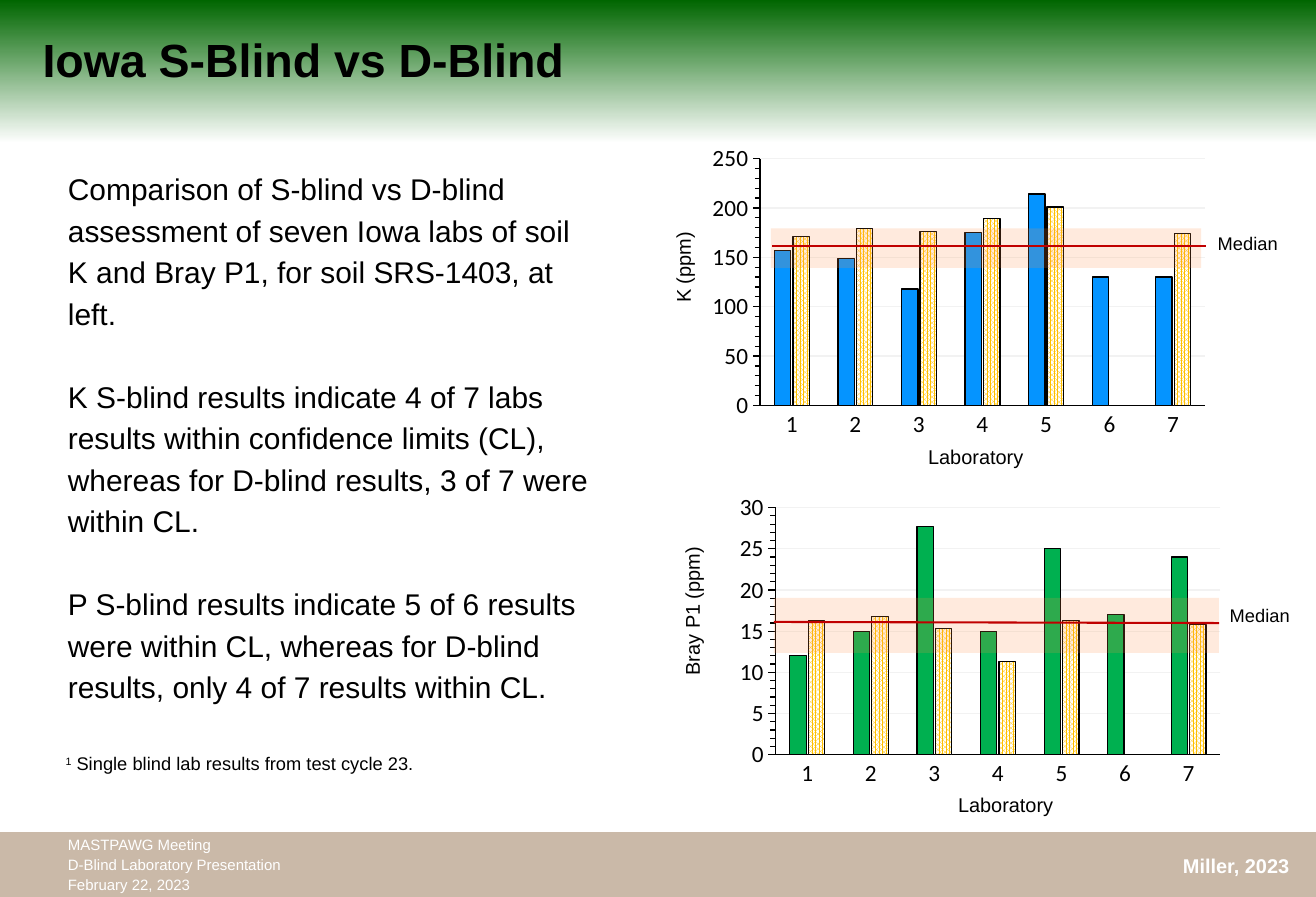
from pptx import Presentation
from pptx.chart.data import CategoryChartData
from pptx.dml.color import RGBColor
from pptx.enum.chart import XL_CHART_TYPE, XL_TICK_MARK
from pptx.enum.dml import MSO_PATTERN
from pptx.enum.shapes import MSO_CONNECTOR, MSO_SHAPE
from pptx.enum.text import MSO_ANCHOR, MSO_AUTO_SIZE, PP_ALIGN
from pptx.oxml import parse_xml
from pptx.oxml.ns import nsdecls, qn
from pptx.util import Pt
from lxml.etree import SubElement

# Theme
THEME = {
    "font": "Arial", "chart": "Calibri",
    "ink": "000000", "white": "FFFFFF", "top": "006600", "foot": "663300",
    "band": "FF8F43", "median": "C00000", "gold": "FFC000", "grid": "F2F2F2",
    "title": 28, "body": 18, "tick": 14, "label": 12, "note": 11, "small": 9,
}

# Content
TITLE = "Iowa S-Blind vs D-Blind"
BODY = [
    "Comparison of S-blind vs D-blind assessment of seven Iowa labs of soil "
    "K and Bray P1, for soil SRS-1403, at left.",
    "K S-blind results indicate 4 of 7 labs results within confidence limits "
    "(CL), whereas for D-blind results, 3 of 7 were within CL.",
    "P S-blind results indicate 5 of 6 results were within CL, whereas for "
    "D-blind results, only 4 of 7 results within CL.",
]
NOTE = ("1", " Single blind lab results from test cycle 23.")
MEETING = ["MASTPAWG Meeting", "D-Blind Laboratory Presentation",
           "February 22, 2023"]
AUTHOR = "Miller, 2023"
LABS = ["1", "2", "3", "4", "5", "6", "7"]
# Boxes are left, top, width, height; median is x1, y1, x2, y2
PANELS = [
    {"unit": "K (ppm)", "color": "0594FF", "max": 250, "major": 50, "minor": 10,
     "D-Blind": [157, 149, 118, 175, 214, 130, 130],
     "S-Blind": [171, 179, 176, 189, 201, None, 174],
     "at": (427.7, 86.4), "band": (463.9, 137.5, 259, 23.8),
     "median": (464.8, 148.2, 725.6, 148.2),
     "side": (382.3, 149.8, 57.6, 21.6), "under": (551.5, 264.2, 72, 21.6),
     "tag": (725.8, 136.4, 52.6, 20.9)},
    {"unit": "Bray P1 (ppm)", "color": "00B050", "max": 30, "major": 5, "minor": 1,
     "D-Blind": [12, 15, 27.7, 15, 25, 17, 24],
     "S-Blind": [16.3, 16.8, 15.3, 11.3, 16.3, None, 15.8],
     "at": (437, 296.6), "band": (465.8, 360, 267.8, 33.1),
     "median": (465.8, 374.4, 733.7, 375.1),
     "side": (368.6, 355, 95.8, 21.6), "under": (569.5, 473.8, 72, 21.6),
     "tag": (733, 360, 52.6, 20.9)},
]
SIZE = (298, 181.4)
PLOT = {"x": 0.1, "y": 0.05, "w": 0.9, "h": 0.82}


def tint(name):
    return RGBColor.from_string(THEME.get(name, name))


def write(para, text, size, color="ink", bold=False):
    run = para.add_run()
    run.text = text
    font = run.font
    font.name, font.size, font.bold = THEME["font"], Pt(THEME[size]), bold
    font.color.rgb = tint(color)
    return run


def add_text(slide, box, lines, size, color="ink", bold=False, wrap=False,
             pitch=None, gap=0):
    shape = slide.shapes.add_textbox(*map(Pt, box))
    frame = shape.text_frame
    frame.word_wrap = wrap
    frame.auto_size = MSO_AUTO_SIZE.SHAPE_TO_FIT_TEXT
    for i, line in enumerate(lines):
        para = frame.add_paragraph() if i else frame.paragraphs[0]
        if pitch:
            para.line_spacing = Pt(pitch)
        if i and gap:
            para.space_before = Pt(gap)
        write(para, line, size, color, bold)
    return shape


def add_block(slide, box, color, alpha):
    shape = slide.shapes.add_shape(MSO_SHAPE.RECTANGLE, *map(Pt, box))
    shape.shadow.inherit = False
    shape.fill.solid()
    shape.fill.fore_color.rgb = tint(color)
    shape.line.fill.background()
    tone = shape.fill._xPr.find(qn("a:solidFill"))[0]
    SubElement(tone, qn("a:alpha")).set("val", str(alpha * 1000))


def add_line(slide, ends):
    line = slide.shapes.add_connector(MSO_CONNECTOR.STRAIGHT, *map(Pt, ends))
    line.line.color.rgb = tint("median")
    line.line.width = Pt(1.25)
    SubElement(line._element.spPr, qn("a:effectLst"))


def add_bars(slide, panel):
    data = CategoryChartData()
    data.categories = LABS
    for name in ("D-Blind", "S-Blind"):
        data.add_series(name, panel[name])
    chart = slide.shapes.add_chart(XL_CHART_TYPE.COLUMN_CLUSTERED,
                                   *map(Pt, panel["at"] + SIZE), data).chart
    chart.has_legend = chart.has_title = False
    font = chart.font
    font.name, font.size, font.bold = THEME["chart"], Pt(THEME["tick"]), False
    font.color.rgb = tint("ink")

    # Bars
    plot = chart.plots[0]
    plot.gap_width, plot.overlap, plot.vary_by_categories = 176, -13, False
    for bars in plot.series:
        fill = bars.format.fill
        if bars.name == "D-Blind":
            fill.solid()
            fill.fore_color.rgb = tint(panel["color"])
        else:
            fill.patterned()
            fill.pattern = MSO_PATTERN.PERCENT_80
            fill.fore_color.rgb = tint("gold")
            fill.back_color.rgb = tint("white")
        bars.format.line.color.rgb = tint("ink")
        bars.format.line.width = Pt(0.75)

    # Axes
    base, scale = chart.category_axis, chart.value_axis
    base.major_tick_mark = XL_TICK_MARK.NONE
    scale.major_tick_mark = scale.minor_tick_mark = XL_TICK_MARK.OUTSIDE
    scale.minimum_scale, scale.maximum_scale = 0, panel["max"]
    scale.major_unit = panel["major"]
    unit = scale._element.find(qn("c:majorUnit"))
    unit.addnext(parse_xml(
        f'<c:minorUnit {nsdecls("c")} val="{panel["minor"]}"/>'))
    scale.tick_labels.number_format = "0"
    scale.tick_labels.number_format_is_linked = False
    for line, color, width in ((base.format.line, "ink", 1),
                               (scale.format.line, "ink", 0.75),
                               (scale.major_gridlines.format.line, "grid", 0.75)):
        line.color.rgb = tint(color)
        line.width = Pt(width)

    # Fixed plot area
    area = chart._chartSpace.chart.plotArea
    for old in area.findall(qn("c:layout")):
        area.remove(old)
    rows = "".join(f'<c:{k} val="{v}"/>' for k, v in PLOT.items())
    area.insert(0, parse_xml(
        f'<c:layout {nsdecls("c")}><c:manualLayout><c:layoutTarget val="inner"/>'
        f'<c:xMode val="edge"/><c:yMode val="edge"/>{rows}'
        '</c:manualLayout></c:layout>'))


def main():
    deck = Presentation()
    deck.slide_width, deck.slide_height = Pt(792), Pt(540)
    slide = deck.slides.add_slide(deck.slide_layouts[5])

    # Background fade
    fill = slide.background.fill
    fill.gradient()
    fill.gradient_angle = 270
    for stop, color, spot in zip(fill.gradient_stops, ("top", "white"), (0, 0.16)):
        stop.color.rgb = tint(color)
        stop.position = spot

    # Title
    title = slide.shapes.title
    title.left, title.top, title.width, title.height = map(Pt, (12.2, 3.6, 340.6, 63.4))
    title.text_frame.vertical_anchor = MSO_ANCHOR.MIDDLE
    para = title.text_frame.paragraphs[0]
    para.alignment = PP_ALIGN.CENTER
    write(para, TITLE, "title", bold=True)

    # Footer
    add_block(slide, (0, 501, 792, 39), "foot", 34)
    add_text(slide, (704.9, 510.5, 79.2, 21.6), [AUTHOR], "label", "white", True)
    add_text(slide, (33.8, 498.2, 149, 43.9), MEETING, "small", "white", pitch=12)

    # Chart panels
    for panel in PANELS:
        add_bars(slide, panel)
        add_block(slide, panel["band"], "band", 18)
        add_line(slide, panel["median"])
        add_text(slide, panel["side"], [panel["unit"]], "label").rotation = 270
        add_text(slide, panel["under"], ["Laboratory"], "label")
        add_text(slide, panel["tag"], ["Median"], "note")

    # Findings and footnote
    add_text(slide, (33.8, 95.8, 329.8, 333.4), BODY, "body", wrap=True,
             pitch=25, gap=25)
    mark, rest = NOTE
    note = add_text(slide, (32.4, 449.3, 350, 20.9), [mark], "note", wrap=True)
    para = note.text_frame.paragraphs[0]
    para.runs[0].font._element.set("baseline", "30000")
    write(para, rest, "note")

    deck.save("out.pptx")


if __name__ == "__main__":
    main()
